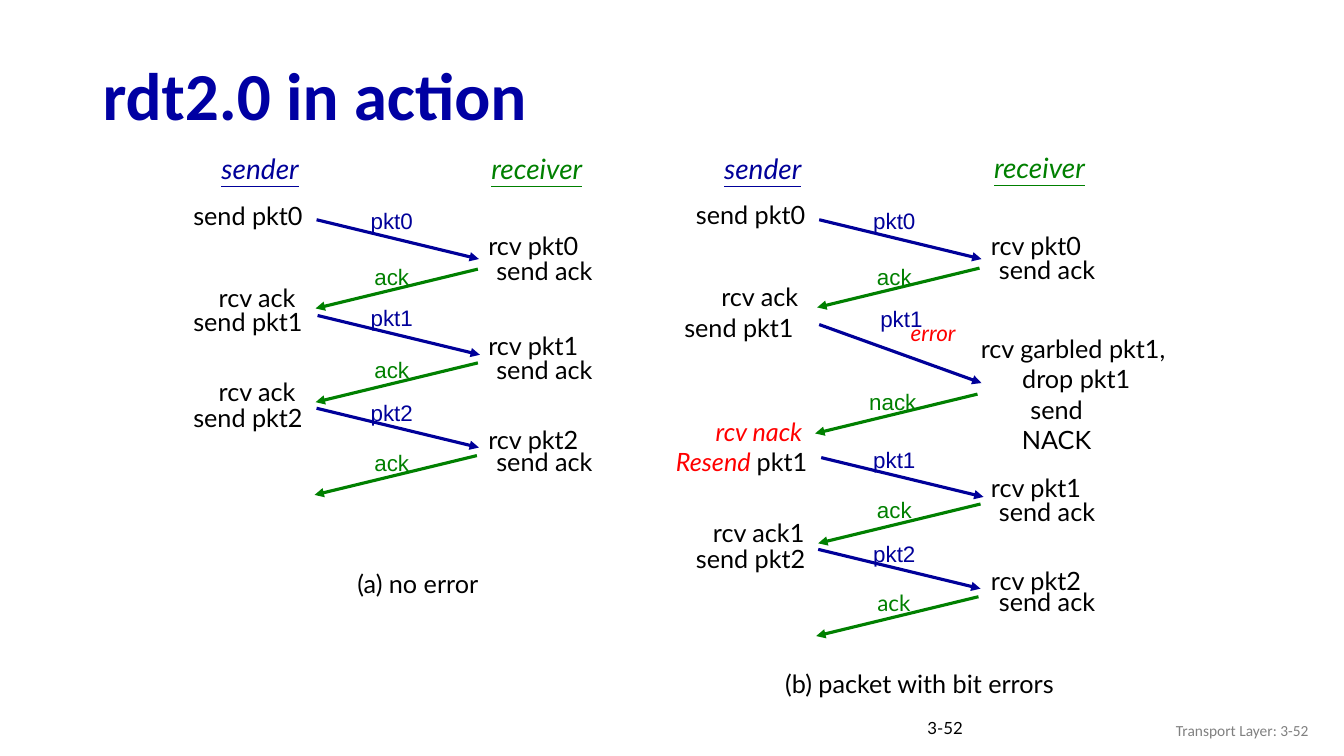
import pptx
import pptx.dml.color
import pptx.enum.shapes
import pptx.enum.text
import pptx.oxml
import pptx.oxml.ns
import pptx.util

COLORS = {"title": "0000A3", "packet": "000099", "reply": "008000",
          "error": "FF0000", "body": "000000", "footer": "808080"}
ALIGN = pptx.enum.text.PP_ALIGN
ANCHOR = pptx.enum.text.MSO_ANCHOR
FIT = pptx.enum.text.MSO_AUTO_SIZE
CELL = 0.1  # inches per grid column and row
PANEL_SHIFT = 49.85  # columns between the two diagrams

# Centre column and width of each kind of label
PLACES = {"sender": (25.8, 10.2), "receiver": (53.25, 11.7),
          "send pkt": (24.6, 12.9), "rcv ack1": (25.4, 11.4),
          "rcv ack": (25.5, 9.9), "rcv pkt": (52.9, 11.2), "send ack": (54, 11.8)}


def length(cells):
    return pptx.util.Inches(cells * CELL)


def color(name):
    return pptx.dml.color.RGBColor.from_string(COLORS[name])


def add_span(para, text, font="Lato", size=18, fill="body", **marks):
    span = para.add_run()
    span.text = text
    span.font.name = font
    span.font.size = pptx.util.Pt(size)
    span.font.color.rgb = color(fill)
    for mark, value in marks.items():
        setattr(span.font, mark, value)


class Page:
    def __init__(self, deck):
        self.shapes = deck.slides.add_slide(deck.slide_layouts[6]).shapes
        self.shift = 0

    def text(self, lines, center, top, width, height=4, wrap=False,
             align=ALIGN.CENTER, anchor=ANCHOR.TOP, spacing=None, **style):
        """Each line is a string or a list of (text, format) pairs."""
        box = self.shapes.add_textbox(length(self.shift + center - width / 2),
                                      length(top), length(width), length(height))
        frame = box.text_frame
        frame.word_wrap = wrap
        frame.auto_size = FIT.NONE if wrap else FIT.SHAPE_TO_FIT_TEXT
        frame.vertical_anchor = anchor
        for index, line in enumerate(lines):
            para = frame.add_paragraph() if index else frame.paragraphs[0]
            para.alignment = align
            if spacing:
                para.line_spacing = spacing
            for text, extra in ([(line, {})] if isinstance(line, str) else line):
                add_span(para, text, **{**style, **extra})

    def event(self, text, top, **style):
        kind = next(kind for kind in PLACES if text.startswith(kind))
        center, width = PLACES[kind]
        self.text([text], center, top, width, **style)

    def arrow(self, start, top, run, drop, fill):
        start += self.shift
        line = self.shapes.add_connector(
            pptx.enum.shapes.MSO_CONNECTOR.STRAIGHT, length(start), length(top),
            length(start + run), length(top + drop))
        line.line.color.rgb = color(fill)
        line.line.width = pptx.util.Pt(2.25)
        head = pptx.oxml.parse_xml(
            f'<a:tailEnd {pptx.oxml.ns.nsdecls("a")} type="triangle"/>')
        line.line._get_or_add_ln().append(head)
        effects = pptx.oxml.parse_xml(f'<a:effectLst {pptx.oxml.ns.nsdecls("a")}/>')
        line._element.spPr.append(effects)

    def message(self, label, start, top, label_top, center=38.85, drop=3.9, font="Arial"):
        sent = label.startswith("pkt")
        fill = "packet" if sent else "reply"
        self.arrow(start, top, 16.1 if sent else -16.1, drop, fill)
        self.text([label], center, label_top, 6.8, 3.7, font=font, size=16, fill=fill)

    def panel(self, shift, events, messages, receiver_top=14.5):
        self.shift = shift
        heading = dict(height=4.3, size=20, italic=True, underline=True)
        self.event("sender", 14.5, fill="packet", **heading)
        self.event("receiver", receiver_top, fill="reply", **heading)
        for text, top in events:
            self.event(text, top)
        for message in messages:
            self.message(*message)


def main():
    deck = pptx.Presentation()
    deck.slide_width = pptx.util.Inches(13.33)
    deck.slide_height = pptx.util.Inches(7.5)
    page = Page(deck)

    # Title
    page.text(["rdt2.0 in action"], 66.7, 4.9, 115, 9.8, wrap=True, align=ALIGN.LEFT,
              anchor=ANCHOR.MIDDLE, spacing=0.9, font="Calibri", size=48,
              fill="title", bold=True)

    # (a) Exchange without errors: events, then label, start, top, label top
    page.panel(0, [
        ("send pkt0", 19.4), ("rcv pkt0", 22.4), ("send ack", 24.8),
        ("rcv ack", 27.5), ("send pkt1", 29.9), ("rcv pkt1", 32.3),
        ("send ack", 34.7), ("rcv ack", 36.8), ("send pkt2", 39.4),
        ("rcv pkt2", 41.6), ("send ack", 43.8),
    ], [
        ("pkt0", 31.4, 21.8, 20.1), ("ack", 47.4, 26.7, 25.6),
        ("pkt1", 31.5, 31.3, 29.7), ("ack", 47.4, 36, 34.8),
        ("pkt2", 31.4, 40.5, 39.1), ("ack", 47.3, 45.2, 44.1),
    ])
    page.text(["(a) no error"], 41.45, 55.9, 15.1)

    # (b) Exchange with a garbled packet
    page.panel(PANEL_SHIFT, [
        ("send pkt0", 19.3), ("rcv pkt0", 22.4), ("send ack", 24.7),
        ("rcv ack", 27.4), ("rcv pkt1", 46.4), ("send ack", 48.7),
        ("rcv ack1", 50.8), ("send pkt2", 53.4), ("rcv pkt2", 55.6),
        ("send ack", 57.7),
    ], [
        ("pkt0", 31.4, 21.8, 20.1), ("ack", 47.3, 26.6, 25.6),
        ("pkt1", 31.4, 32.2, 29.8, 39.55, 5.8), ("nack", 47.1, 39.1, 38, 38.7),
        ("pkt1", 31.6, 45.4, 43.8), ("ack", 47.4, 50, 48.7),
        ("pkt2", 31.3, 54.5, 53.1), ("ack", 47.2, 59.2, 58, 38.8, 3.9, "Lato"),
    ], receiver_top=14.4)
    page.text(["send pkt1"], 23.45, 30.5, 15.3, wrap=True)
    page.text(["error"], 42.7, 31.2, 6.8, 3.7, size=16, fill="error", italic=True)
    page.text(["rcv garbled pkt1, ", "drop pkt1"], 56.9, 32.6, 21.4, 7.1, wrap=True)
    page.text(["send NACK"], 54.95, 38.6, 14.3, wrap=True)
    alert = dict(fill="error", italic=True)
    retry = dict(height=3.3, align=ALIGN.RIGHT, spacing=0.75)
    page.text(["rcv nack"], 25.05, 41.5, 11.3, **retry, **alert)
    page.text([[("Resend ", alert), ("pkt1", {})]], 23.3, 44.5, 15.8, **retry)
    page.text(["(b) packet with bit errors"], 41.35, 65.8, 29.9)

    # Footer
    page.shift = 0
    page.text(["3-52"], 94.7, 70.7, 7.4, 3, wrap=True, align=ALIGN.LEFT, size=12)
    page.text(["Transport Layer: 3-52"], 115.8, 70.5, 30, wrap=True, align=ALIGN.RIGHT,
              anchor=ANCHOR.MIDDLE, font="Calibri", size=11, fill="footer")
    deck.save("out.pptx")


if __name__ == "__main__":
    main()
